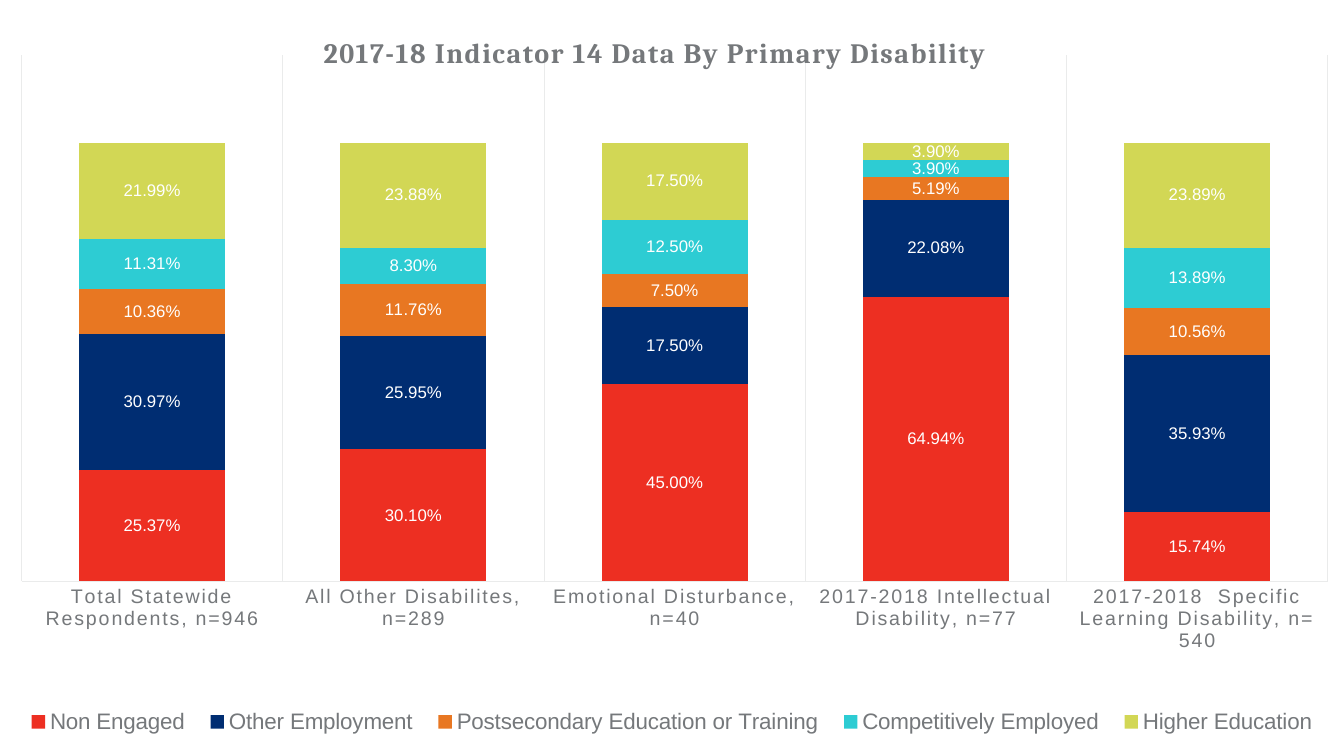
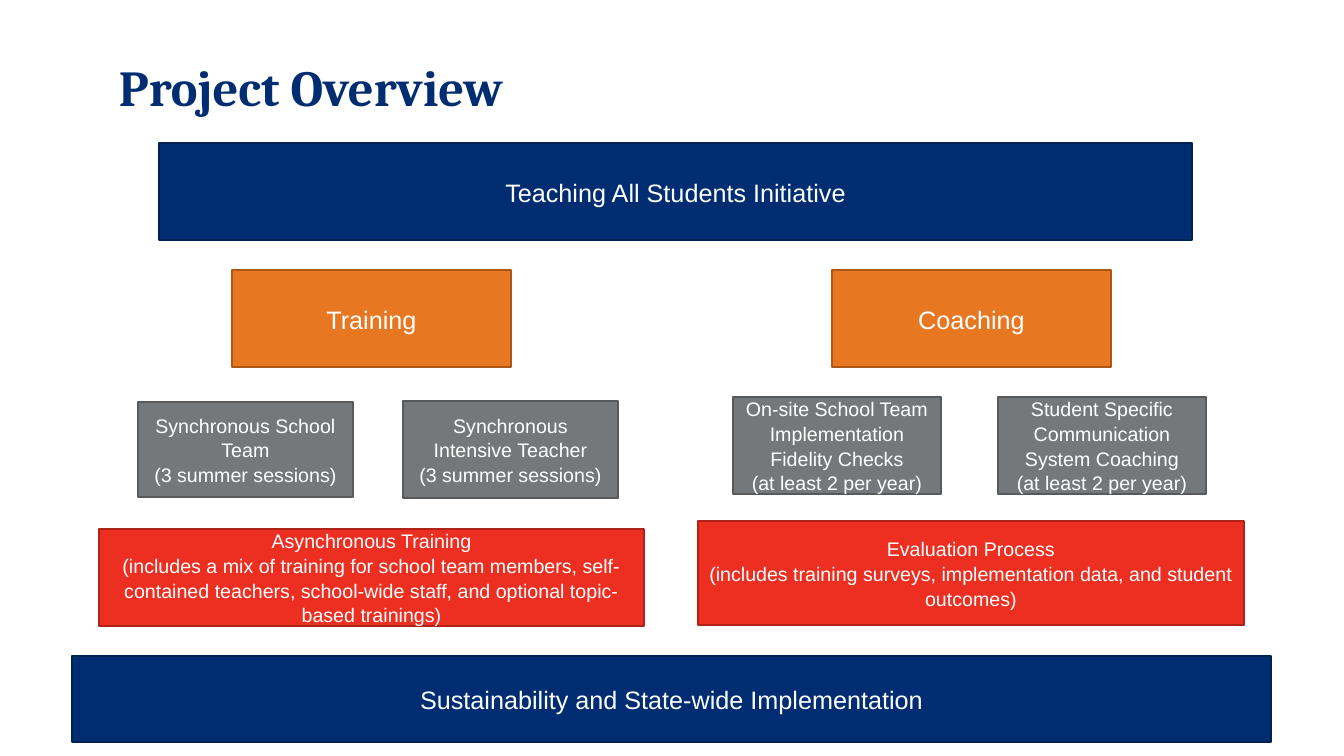
"""Build two slides: outcomes by primary disability and a project overview."""
from lxml.etree import SubElement
from pptx import Presentation
from pptx.chart.data import CategoryChartData
from pptx.dml.color import RGBColor
from pptx.enum.chart import XL_CHART_TYPE, XL_LABEL_POSITION, XL_LEGEND_POSITION, XL_TICK_MARK
from pptx.enum.shapes import MSO_SHAPE
from pptx.enum.text import MSO_ANCHOR, PP_ALIGN
from pptx.oxml.ns import qn
from pptx.util import Emu, Pt

PX = 914400 / 100.8
WIDTH, HEIGHT = 1344, 756
NAVY, ORANGE, RED, GRAY, WHITE = "002D72", "E87722", "ED2F22", "75787B", "FFFFFF"
TEAL, LIME, PALE = "2DCCD3", "D2D755", "EAEBEB"
HEADING, BODY = "Cambria", "Arial"

CHART_TITLE = "2017-18 Indicator 14 Data By Primary Disability"
GROUPS = [
    "Total Statewide Respondents, n=946",
    "All Other Disabilites, n=289",
    "Emotional Disturbance, n=40",
    "2017-2018 Intellectual Disability, n=77",
    "2017-2018  Specific Learning Disability, n= 540",
]
OUTCOMES = [
    ("Non Engaged", RED, (0.2537, 0.301, 0.45, 0.6494, 0.1574)),
    ("Other Employment", NAVY, (0.3097, 0.2595, 0.175, 0.2208, 0.3593)),
    ("Postsecondary Education or Training", ORANGE, (0.1036, 0.1176, 0.075, 0.0519, 0.1056)),
    ("Competitively Employed", TEAL, (0.1131, 0.083, 0.125, 0.039, 0.1389)),
    ("Higher Education", LIME, (0.2199, 0.2388, 0.175, 0.039, 0.2389)),
]
CHART_AREAS = {
    "plotArea": (0, {"layoutTarget": "inner", "xMode": "edge", "yMode": "edge",
                     "x": 0.016, "y": 0.073, "w": 0.972, "h": 0.696}),
    "title": (1, {"xMode": "edge", "yMode": "edge", "x": 0.237, "y": 0.04}),
    "legend": (1, {"xMode": "edge", "yMode": "edge",
                   "x": 0.01, "y": 0.93, "w": 0.98, "h": 0.05}),
}

OVERVIEW_TITLE = "Project Overview"
PROCESS, BAR = MSO_SHAPE.FLOWCHART_PROCESS, MSO_SHAPE.RECTANGLE
LEVELS = {
    "initiative": (PROCESS, NAVY, "002154", 18),
    "strand": (PROCESS, ORANGE, "AC5819", 18),
    "activity": (PROCESS, GRAY, "57595B", 14),
    "support": (PROCESS, RED, "AF2319", 14),
    "foundation": (BAR, NAVY, "002154", 18),
}
SUMMER, YEARLY = "(3 summer sessions)", "(at least 2 per year)"
STEPS = [
    ("initiative", (159, 143, 1033, 97), ["Teaching All Students Initiative"]),
    ("strand", (232, 270, 279, 97), ["Training"]),
    ("strand", (832, 270, 279, 97), ["Coaching"]),
    ("activity", (138, 402, 215, 95), ["Synchronous School Team", SUMMER]),
    ("activity", (403, 401, 215, 97), ["Synchronous Intensive Teacher", SUMMER]),
    ("activity", (733, 397, 208, 97),
     ["On-site School Team Implementation Fidelity Checks", YEARLY]),
    ("activity", (998, 397, 208, 97),
     ["Student Specific Communication System Coaching", YEARLY]),
    ("support", (99, 529, 545, 97),
     ["Asynchronous Training",
      "(includes a mix of training for school team members, self-contained teachers, "
      "school-wide staff, and optional topic-based trainings)"]),
    ("support", (698, 521, 546, 104),
     ["Evaluation Process",
      "(includes training surveys, implementation data, and student outcomes)"]),
    ("foundation", (72, 656, 1199, 86), ["Sustainability and State-wide Implementation"]),
]


def px(*lengths):
    return [Emu(round(length * PX)) for length in lengths]


def color(hex_value):
    return RGBColor.from_string(hex_value)


def assign(target, values):
    for key, value in values.items():
        setattr(target, key, value)


def style(font, size, ink, name=BODY, bold=False):
    assign(font, {"size": Pt(size), "name": name, "bold": bold})
    font.color.rgb = color(ink)


def fill(part, ink):
    part.fill.solid()
    part.fill.fore_color.rgb = color(ink)


def outline(line, ink, width):
    line.color.rgb = color(ink)
    line.width = Pt(width)


def place_area(space, tag, index, values):
    area = space.xpath(f"c:chart//c:{tag}")[0]
    for old in area.findall(qn("c:layout")):
        area.remove(old)
    layout = SubElement(area, qn("c:layout"))
    manual = SubElement(layout, qn("c:manualLayout"))
    for key, value in values.items():
        SubElement(manual, qn(f"c:{key}")).set("val", str(value))
    area.insert(index, layout)


def add_outcomes(slide):
    data = CategoryChartData(number_format="0.00%")
    data.categories = GROUPS
    for name, _, shares in OUTCOMES:
        data.add_series(name, shares)
    chart = slide.shapes.add_chart(
        XL_CHART_TYPE.COLUMN_STACKED, *px(0, 0, WIDTH, HEIGHT), data).chart
    style(chart.font, 10, GRAY, "Open Sans")

    heading = chart.chart_title.text_frame.paragraphs[0].add_run()
    heading.text = CHART_TITLE
    style(heading.font, 20, GRAY, HEADING, True)
    heading.font._element.set("spc", "100")

    chart.has_legend = True
    assign(chart.legend, {"position": XL_LEGEND_POSITION.TOP, "include_in_layout": False})
    style(chart.legend.font, 16, GRAY)

    groups, shares = chart.category_axis, chart.value_axis
    assign(groups, {"major_tick_mark": XL_TICK_MARK.NONE, "has_major_gridlines": True})
    style(groups.tick_labels.font, 14, GRAY)
    groups.tick_labels.font._element.set("spc", "120")
    for line in (groups.format.line, groups.major_gridlines.format.line):
        outline(line, PALE, 0.75)
    assign(shares, {"visible": False, "has_major_gridlines": False,
                    "minimum_scale": 0, "maximum_scale": 1.2})

    assign(chart.plots[0], {"gap_width": 79, "overlap": 100, "vary_by_categories": False})
    for series, (_, ink, _) in zip(chart.plots[0].series, OUTCOMES):
        fill(series.format, ink)
        labels = series.data_labels
        assign(labels, {"show_value": True, "number_format": "0.00%",
                        "number_format_is_linked": False,
                        "position": XL_LABEL_POSITION.CENTER})
        style(labels.font, 12, WHITE)
    for tag, (index, values) in CHART_AREAS.items():
        place_area(chart._chartSpace, tag, index, values)


def write(frame, lines, align, spacing, **look):
    assign(frame, {"word_wrap": True, "vertical_anchor": MSO_ANCHOR.MIDDLE})
    for number, text in enumerate(lines):
        paragraph = frame.add_paragraph() if number else frame.paragraphs[0]
        assign(paragraph, {"text": text, "alignment": align, "line_spacing": spacing})
        style(paragraph.runs[0].font, **look)


def add_step(slide, level, place, lines):
    form, ink, edge, size = LEVELS[level]
    step = slide.shapes.add_shape(form, *px(*place))
    step.shadow.inherit = False
    fill(step, ink)
    outline(step.line, edge, 1)
    write(step.text_frame, lines, PP_ALIGN.CENTER, 1.05, size=size, ink=WHITE)


def add_overview(slide):
    heading = slide.shapes.add_textbox(*px(109, 25, 1235, 123))
    write(heading.text_frame, [OVERVIEW_TITLE], PP_ALIGN.LEFT, 1.0,
          size=36, ink=NAVY, name=HEADING, bold=True)
    for step in STEPS:
        add_step(slide, *step)


def main():
    deck = Presentation()
    deck.slide_width, deck.slide_height = px(WIDTH, HEIGHT)
    for build in (add_outcomes, add_overview):
        build(deck.slides.add_slide(deck.slide_layouts[6]))
    deck.save("out.pptx")


if __name__ == "__main__":
    main()
